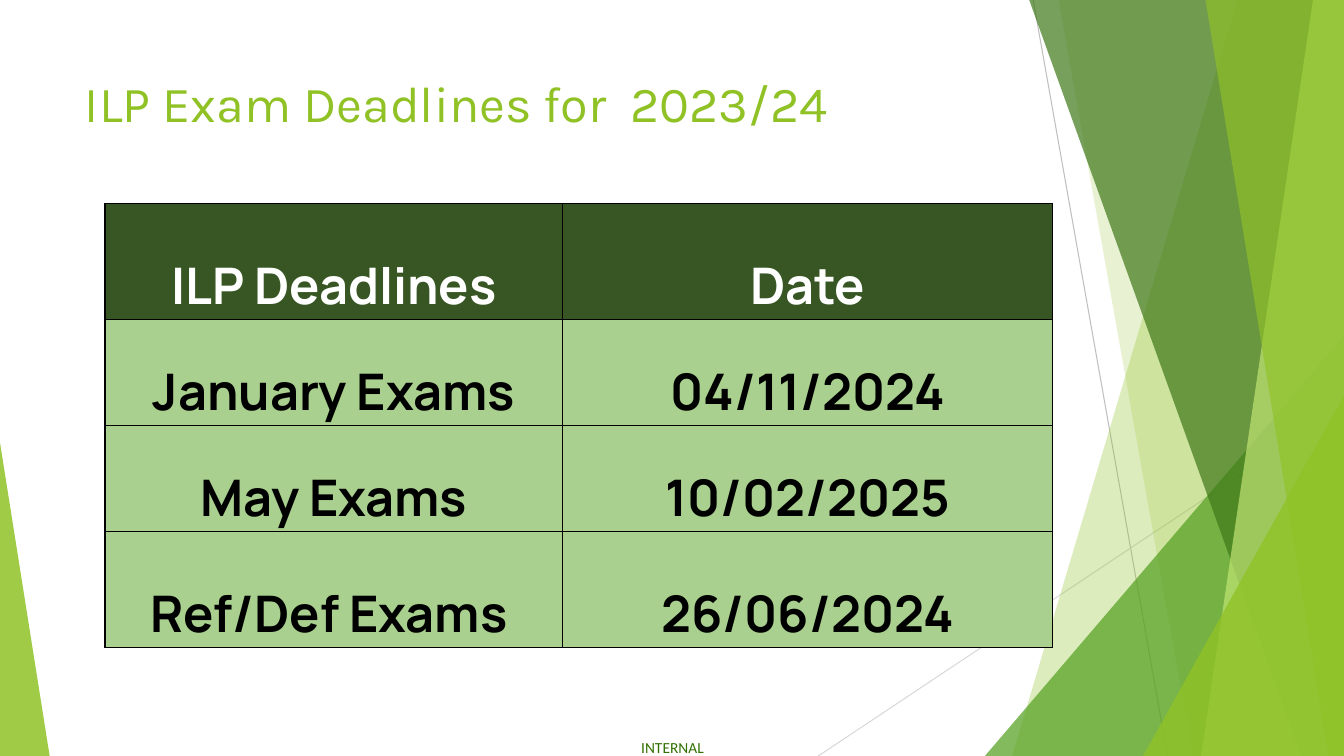
from lxml import etree
from pptx import Presentation
from pptx.dml.color import RGBColor
from pptx.enum.shapes import MSO_CONNECTOR, MSO_SHAPE
from pptx.enum.text import MSO_ANCHOR, PP_ALIGN
from pptx.oxml.ns import qn
from pptx.util import Pt

STRAIGHT = MSO_CONNECTOR.STRAIGHT
TRIANGLE = MSO_SHAPE.ISOSCELES_TRIANGLE
TOP, BOTTOM = MSO_ANCHOR.TOP, MSO_ANCHOR.BOTTOM
LEFT, CENTER = PP_ALIGN.LEFT, PP_ALIGN.CENTER

WIDTH, HEIGHT = 960, 540
LIME = "90C226"
ROWS = [
    ("ILP Deadlines", "Date"),
    ("January Exams", "04/11/2024"),
    ("May Exams", "10/02/2025"),
    ("Ref/Def Exams ", "26/06/2024"),
]


def color(code):
    return RGBColor.from_string(code)


def paint(shape, code, alpha):
    shape.shadow.inherit = False
    shape.line.fill.background()
    shape.fill.solid()
    shape.fill.fore_color.rgb = color(code)
    tone = shape.fill._xPr.find(qn("a:solidFill"))[0]
    etree.SubElement(tone, qn("a:alpha"), val=str(alpha * 1000))


def write(frame, text, font, size, code, align=LEFT, bold=False):
    frame.text = text
    para = frame.paragraphs[0]
    para.alignment = align
    style = para.runs[0].font
    style.name, style.size, style.bold = font, Pt(size), bold
    style.color.rgb = color(code)


def add_line(slide, ends, code):
    line = slide.shapes.add_connector(STRAIGHT, *map(Pt, ends))
    line.line.color.rgb = color(code)
    line.line.width = Pt(0.75)
    etree.SubElement(line._element.spPr, qn("a:effectLst"))


def add_band(slide, top, base, code, alpha):
    pen = slide.shapes.build_freeform(Pt(top), Pt(-0.5))
    corners = [(WIDTH, -0.5), (WIDTH, HEIGHT), (base, HEIGHT)]
    pen.add_line_segments([(Pt(x), Pt(y)) for x, y in corners])
    paint(pen.convert_to_shape(), code, alpha)


def add_wedge(slide, left, top, width, peak, code, alpha):
    box = map(Pt, (left, top, width, HEIGHT - top))
    wedge = slide.shapes.add_shape(TRIANGLE, *box)
    wedge.adjustments[0] = peak
    paint(wedge, code, alpha)


def add_decor(slide):
    add_line(slide, (738, 0, 834, HEIGHT), "BFBFBF")
    add_line(slide, (WIDTH, 290, 584.5, HEIGHT), "D9D9D9")
    add_band(slide, 884, 723, LIME, 30)
    add_band(slide, 756, 852, LIME, 20)
    add_wedge(slide, 703.5, 240, 256.5, 1, "54A021", 72)
    add_band(slide, 735, 929.5, "3F7819", 70)
    add_band(slide, 938, 858, "C0E474", 70)
    add_band(slide, 861, 949, LIME, 65)
    add_wedge(slide, 816.5, 283, 143.5, 1, LIME, 80)
    add_wedge(slide, 0, 316, 35.5, 0, LIME, 85)


def add_title(slide, text):
    title = slide.shapes.title
    title.left, title.top = Pt(53.5), Pt(48)
    title.width, title.height = Pt(677), Pt(104)
    title.text_frame.vertical_anchor = TOP
    write(title.text_frame, text, "Karla", 36, LIME)


def add_label(slide, text):
    box = slide.shapes.add_textbox(Pt(458), Pt(527), Pt(47.5), Pt(13))
    frame = box.text_frame
    frame.margin_left = frame.margin_right = 0
    frame.margin_top = frame.margin_bottom = 0
    write(frame, text, "Calibri", 11, "317100")


def add_edges(cell):
    props = cell._tc.get_or_add_tcPr()
    for spot, side in enumerate(("a:lnL", "a:lnR", "a:lnT", "a:lnB")):
        edge = etree.Element(qn(side), w=str(Pt(1)))
        fill = etree.SubElement(edge, qn("a:solidFill"))
        etree.SubElement(fill, qn("a:srgbClr"), val="000000")
        props.insert(spot, edge)


def fill_cell(cell, text, back, ink):
    cell.margin_left = cell.margin_right = Pt(5)
    cell.margin_top = cell.margin_bottom = 0
    cell.vertical_anchor = BOTTOM
    cell.fill.solid()
    cell.fill.fore_color.rgb = color(back)
    write(cell.text_frame, text, "Manrope", 36, ink, CENTER, True)
    add_edges(cell)


def add_dates(slide):
    box = map(Pt, (75, 145.5, 677, 317))
    table = slide.shapes.add_table(len(ROWS), 2, *box).table
    for col, width in zip(table.columns, (327, 350)):
        col.width = Pt(width)
    for row, height in zip(table.rows, (83, 75.5, 75.5, 83)):
        row.height = Pt(height)
    for r, texts in enumerate(ROWS):
        back, ink = ("A9D08E", "000000") if r else ("375623", "FFFFFF")
        for c, text in enumerate(texts):
            fill_cell(table.cell(r, c), text, back, ink)


def main():
    deck = Presentation()
    deck.slide_width, deck.slide_height = Pt(WIDTH), Pt(HEIGHT)
    slide = deck.slides.add_slide(deck.slide_layouts[5])
    add_decor(slide)
    add_label(slide, "INTERNAL")
    add_title(slide, "ILP Exam Deadlines for  2023/24")
    add_dates(slide)
    deck.save("out.pptx")


if __name__ == "__main__":
    main()
